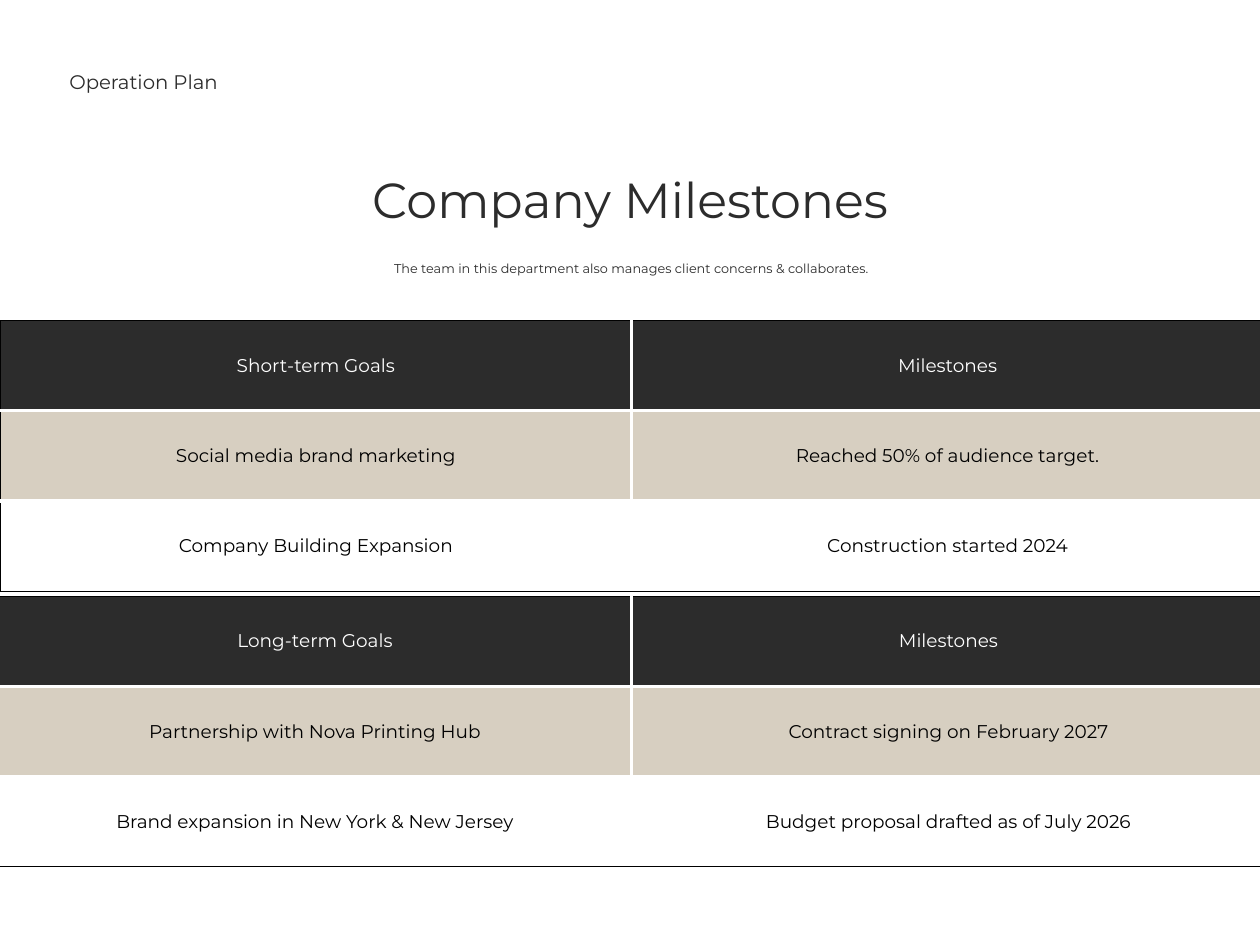
from dataclasses import dataclass

from lxml.etree import SubElement
from pptx import Presentation
from pptx.dml.color import RGBColor as RGB
from pptx.enum.text import MSO_ANCHOR as ANCHOR, PP_ALIGN as ALIGN
from pptx.oxml.ns import qn
from pptx.util import Cm, Pt


@dataclass(frozen=True)
class Theme:
    font: str = "Montserrat"
    dark: str = "2C2C2C"
    sand: str = "D7CFC1"
    white: str = "FFFFFF"
    black: str = "000000"
    title: int = 40
    subtitle: int = 18
    label: int = 16
    cell: int = 15


theme = Theme()


def write(tf, text, size, color, align=ALIGN.CENTER):
    tf.word_wrap = True
    p = tf.paragraphs[0]
    p.alignment = align
    p.font.name = theme.font
    p.font.size = Pt(size)
    p.font.color.rgb = RGB.from_string(color)
    r = p.add_run()
    r.text = text
    return p


def add_border(cell, side, outer):
    width, color = (Pt(0.75), theme.black) if outer else (Pt(3), theme.white)
    ln = SubElement(cell._tc.get_or_add_tcPr(), qn(f"a:ln{side}"), w=str(width))
    fill = SubElement(ln, qn("a:solidFill"))
    SubElement(fill, qn("a:srgbClr"), val=color)


prs = Presentation()
prs.slide_width, prs.slide_height = Cm(36.12), Cm(27.1)
s = prs.slides.add_slide(prs.slide_layouts[0])

goal_tables = [
    (0, 9.19, 18.11, [
        ("Short-term Goals", "Milestones"),
        ("Social media brand marketing", "Reached 50% of audience target."),
        ("Company Building Expansion", "Construction started 2024"),
    ]),
    (-0.05, 17.09, 18.16, [
        ("Long-term Goals", "Milestones"),
        ("Partnership with Nova Printing Hub", "Contract signing on February 2027"),
        ("Brand expansion in New York & New Jersey", "Budget proposal drafted as of July 2026"),
    ]),
]
row_styles = [(theme.dark, theme.white), (theme.sand, theme.black), (theme.white, theme.black)]
row_height = 2.59

for left, top, col_width, rows in goal_tables:
    table = s.shapes.add_table(
        len(rows), 2, Cm(left), Cm(top), Cm(2 * col_width), Cm(len(rows) * row_height)
    ).table
    for col in table.columns:
        col.width = Cm(col_width)
    for i, (texts, (fill, color)) in enumerate(zip(rows, row_styles)):
        table.rows[i].height = Cm(row_height)
        for j, text in enumerate(texts):
            cell = table.cell(i, j)
            cell.margin_left = cell.margin_right = Cm(0.15)
            cell.margin_top = cell.margin_bottom = Cm(0.15)
            cell.vertical_anchor = ANCHOR.MIDDLE
            edges = {"L": j == 0, "R": j == 1, "T": i == 0, "B": i == len(rows) - 1}
            for side, outer in edges.items():
                add_border(cell, side, outer)
            cell.fill.solid()
            cell.fill.fore_color.rgb = RGB.from_string(fill)
            write(cell.text_frame, text, theme.cell, color)

title, subtitle = s.placeholders
label = s.shapes.add_textbox(0, 0, 0, 0)
headings = [
    (title, (9.91, 4.78, 16.31, 1.85), "Company Milestones", theme.title, ALIGN.CENTER),
    (subtitle, (8.79, 7.34, 18.62, 0.71),
     "The team in this department also manages client concerns & collaborates.",
     theme.subtitle, ALIGN.CENTER),
    (label, (1.91, 1.93, 7.9, 0.84), "Operation Plan", theme.label, ALIGN.LEFT),
]
for sp, box, text, size, align in headings:
    sp.left, sp.top, sp.width, sp.height = map(Cm, box)
    tf = sp.text_frame
    tf.margin_left = tf.margin_right = tf.margin_top = tf.margin_bottom = Cm(0.08)
    tf.vertical_anchor = ANCHOR.MIDDLE
    p = write(tf, text, size, theme.dark, align)
    p.space_before = Pt(0)
    if sp is subtitle:
        p.line_spacing = 1.2
        p.runs[0]._r.get_or_add_rPr().set("baseline", "30000")

prs.save("out.pptx")
